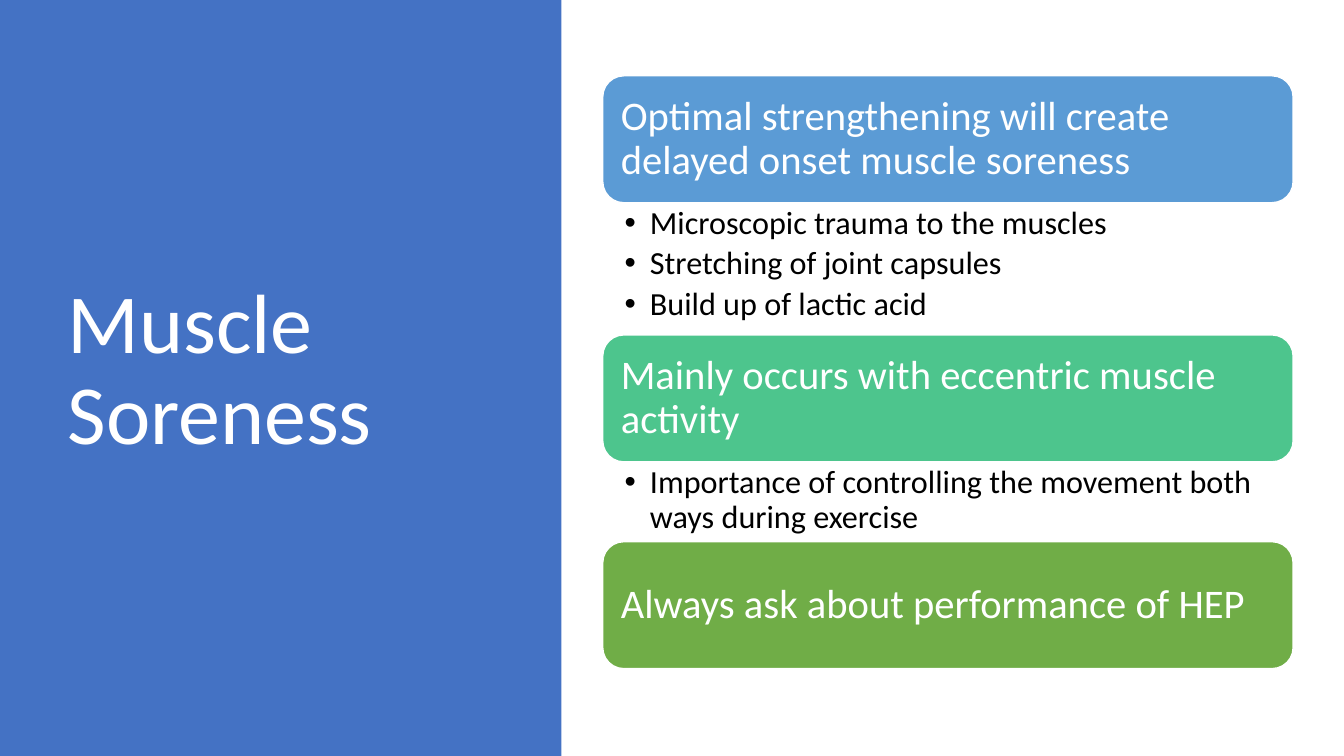
from lxml import etree
from pptx import Presentation
from pptx.dml.color import RGBColor
from pptx.enum import shapes, text
from pptx.oxml import ns
from pptx.util import Cm, Pt

COLOURS = {
    "panel": "4472C4",
    "blue": "5B9BD5",
    "teal": "4DC58D",
    "green": "70AD47",
    "white": "FFFFFF",
    "black": "000000",
}
FONT = "Calibri"
SLIDE_WIDTH, SLIDE_HEIGHT = Cm(33.87), Cm(19.05)
CARD_LEFT, CARD_WIDTH, CARD_HEIGHT = Cm(15.19), Cm(17.4), Cm(3.2)

# Card colour, heading, bullet points, height of the bullet list
SECTIONS = [
    ("blue", "Optimal strengthening will create delayed onset muscle soreness",
     ["Microscopic trauma to the muscles", "Stretching of joint capsules",
      "Build up of lactic acid"], Cm(3.33)),
    ("teal", "Mainly occurs with eccentric muscle activity",
     ["Importance of controlling the movement both ways during exercise"], Cm(2.01)),
    ("green", "Always ask about performance of HEP", [], Cm(0)),
]


def colour(name):
    return RGBColor.from_string(COLOURS[name])


def set_values(target, values):
    for name, value in values.items():
        setattr(target, name, value)


def format_frame(frame, anchor, left, top, right, bottom):
    set_values(frame, {
        "word_wrap": True, "auto_size": text.MSO_AUTO_SIZE.NONE,
        "vertical_anchor": anchor,
        "margin_left": left, "margin_top": top,
        "margin_right": right, "margin_bottom": bottom,
    })


def write(paragraph, words, size, colour_name, space_after=0):
    run = paragraph.add_run()
    run.text = words
    set_values(paragraph, {"alignment": text.PP_ALIGN.LEFT, "line_spacing": 0.9,
                           "space_after": Pt(space_after)})
    set_values(run.font, {"name": FONT, "size": Pt(size)})
    run.font.color.rgb = colour(colour_name)


def add_bullet(paragraph):
    properties = paragraph._p.get_or_add_pPr()
    properties.set("marL", str(Cm(0.64)))
    properties.set("indent", str(-Cm(0.64)))
    etree.SubElement(properties, ns.qn("a:buFont")).set("typeface", "Arial")
    etree.SubElement(properties, ns.qn("a:buChar")).set("char", "•")


def add_panel(slide):
    panel = slide.shapes.add_shape(shapes.MSO_SHAPE.RECTANGLE, 0, 0, Cm(14.15), SLIDE_HEIGHT)
    panel.shadow.inherit = False
    panel.fill.solid()
    panel.fill.fore_color.rgb = colour("panel")
    panel.line.fill.background()
    # Send the panel behind the title
    slide.shapes._spTree.insert(2, panel._element)


def format_title(slide, words):
    title = slide.shapes.title
    set_values(title, {"left": Cm(1.45), "top": Cm(1.73),
                       "width": Cm(10.57), "height": Cm(15.29)})
    format_frame(title.text_frame, text.MSO_ANCHOR.MIDDLE,
                 Cm(0.25), Cm(0.13), Cm(0.25), Cm(0.13))
    write(title.text_frame.paragraphs[0], words, 60, "white")


def add_card(slide, top, fill_name, heading):
    card = slide.shapes.add_shape(shapes.MSO_SHAPE.ROUNDED_RECTANGLE,
                                  CARD_LEFT, top, CARD_WIDTH, CARD_HEIGHT)
    card.shadow.inherit = False
    card.fill.solid()
    card.fill.fore_color.rgb = colour(fill_name)
    card.line.color.rgb = colour("white")
    card.line.width = Pt(1)
    format_frame(card.text_frame, text.MSO_ANCHOR.MIDDLE, *[Cm(0.3)] * 4)
    write(card.text_frame.paragraphs[0], heading, 29, "white")


def add_bullet_list(slide, top, height, points):
    box = slide.shapes.add_textbox(CARD_LEFT, top, CARD_WIDTH, height)
    frame = box.text_frame
    format_frame(frame, text.MSO_ANCHOR.TOP, Cm(0.55), Cm(0.1), Cm(0.58), Cm(0.1))
    for index, point in enumerate(points):
        paragraph = frame.add_paragraph() if index else frame.paragraphs[0]
        write(paragraph, point, 23, "black", space_after=4)
        add_bullet(paragraph)


def main():
    presentation = Presentation()
    set_values(presentation, {"slide_width": SLIDE_WIDTH, "slide_height": SLIDE_HEIGHT})
    slide = presentation.slides.add_slide(presentation.slide_layouts[5])

    # Left side: coloured panel with the title
    add_panel(slide)
    format_title(slide, "Muscle Soreness")

    # Right side: cards and bullet lists stacked without gaps
    top = Cm(1.91)
    for fill_name, heading, points, list_height in SECTIONS:
        add_card(slide, top, fill_name, heading)
        top += CARD_HEIGHT
        if points:
            add_bullet_list(slide, top, list_height, points)
            top += list_height

    presentation.save("out.pptx")


if __name__ == "__main__":
    main()
